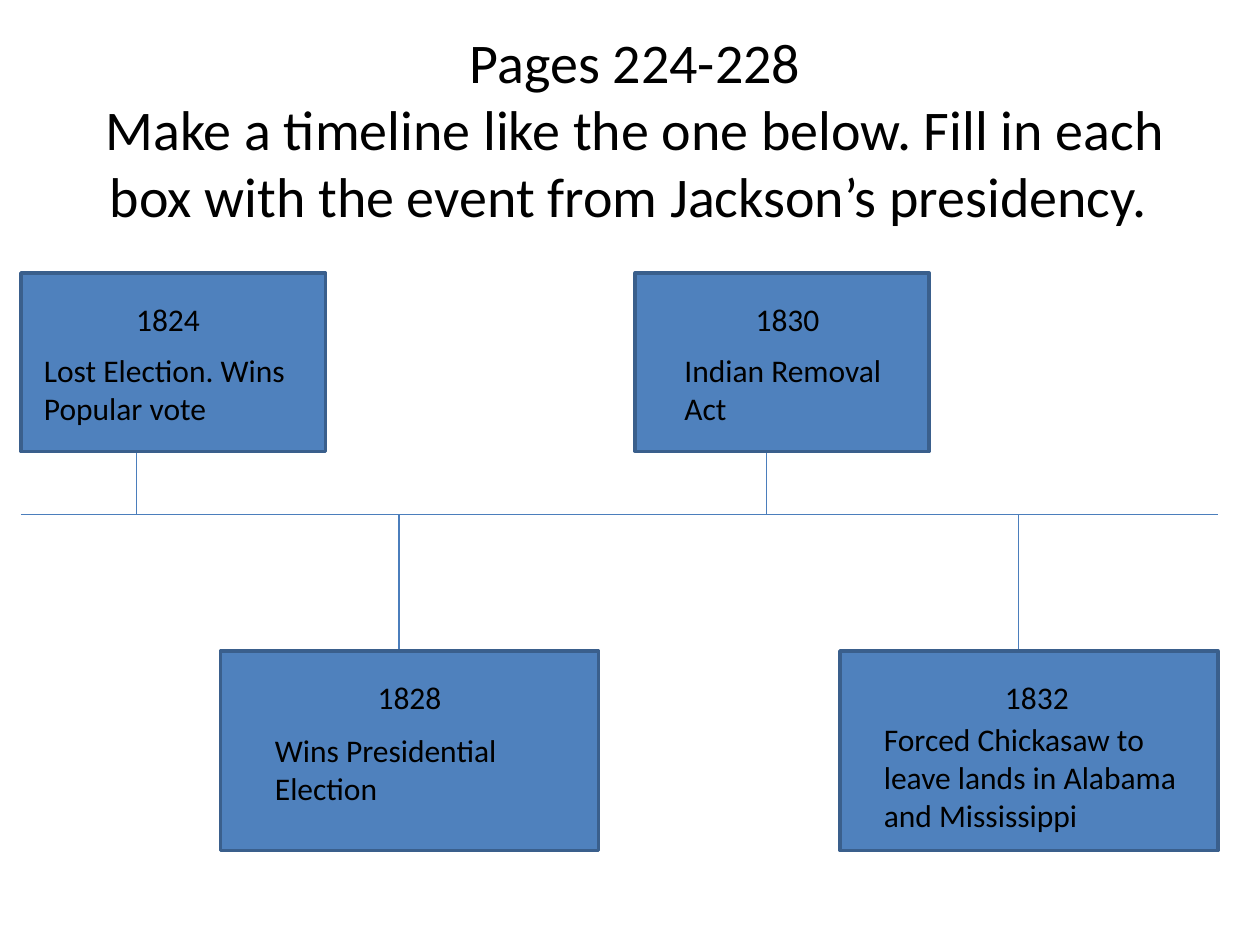
from lxml import etree
from pptx import Presentation
from pptx.dml.color import RGBColor
from pptx.enum.shapes import MSO_CONNECTOR, MSO_SHAPE
from pptx.enum.text import PP_ALIGN
from pptx.oxml.ns import qn
from pptx.util import Pt

BLACK = RGBColor(0x00, 0x00, 0x00)
BOX_FILL = RGBColor(0x4F, 0x81, 0xBD)
BOX_BORDER = RGBColor(0x3A, 0x5F, 0x8C)
LINE_BLUE = RGBColor(0x4B, 0x7E, 0xBC)
STRAIGHT = MSO_CONNECTOR.STRAIGHT
RECTANGLE = MSO_SHAPE.RECTANGLE
CENTER, LEFT = PP_ALIGN.CENTER, PP_ALIGN.LEFT

AXIS_Y = 294

prs = Presentation()
prs.slide_width, prs.slide_height = Pt(720), Pt(540)
slide = prs.slides.add_slide(prs.slide_layouts[6])


def add_text(frame, lines, size, align):
    box = slide.shapes.add_textbox(*map(Pt, frame))
    box.text_frame.word_wrap = True
    box.text_frame.text = "\n".join(lines)
    for paragraph in box.text_frame.paragraphs:
        paragraph.alignment = align
        paragraph.font.name = "Calibri"
        paragraph.font.size = Pt(size)
        paragraph.font.color.rgb = BLACK


def add_line(x1, y1, x2, y2):
    line = slide.shapes.add_connector(STRAIGHT, Pt(x1), Pt(y1), Pt(x2), Pt(y2))
    line.line.color.rgb = LINE_BLUE
    line.line.width = Pt(0.75)
    etree.SubElement(line._element.spPr, qn("a:effectLst"))


# Title
add_text((30, 12, 666, 124), [
    "Pages 224-228",
    "Make a timeline like the one below. Fill in each box with the event "
    "from Jackson’s presidency. ",
], 32, CENTER)

# Timeline axis
add_line(12, AXIS_Y, 696, AXIS_Y)

# Events: year, event, stem x, box, year frame, event frame
events = [
    ("1824", "Lost Election. Wins Popular vote", 78,
     (12, 156, 174, 102), (18, 168, 156, 29), (18, 197, 156, 51)),
    ("1828", "Wins Presidential Election", 228,
     (126, 372, 216, 114), (150, 384, 168, 30), (150, 414, 168, 51)),
    ("1830", "Indian Removal Act", 438,
     (363, 156, 168, 102), (384, 168, 132, 29), (384, 197, 132, 51)),
    ("1832", "Forced Chickasaw to leave lands in Alabama and Mississippi", 582,
     (480, 372, 216, 114), (531, 384, 123, 30), (498, 408, 186, 73)),
]
for year, event, stem_x, box, year_frame, event_frame in events:
    # Stem runs from the axis to the near edge of the box
    left, top, width, height = box
    add_line(stem_x, AXIS_Y, stem_x, top if top > AXIS_Y else top + height)

    event_box = slide.shapes.add_shape(RECTANGLE, *map(Pt, box))
    event_box.shadow.inherit = False
    event_box.fill.solid()
    event_box.fill.fore_color.rgb = BOX_FILL
    event_box.line.color.rgb = BOX_BORDER
    event_box.line.width = Pt(2)

    add_text(year_frame, [year], 18, CENTER)
    add_text(event_frame, [event], 18, LEFT)

prs.save("out.pptx")
